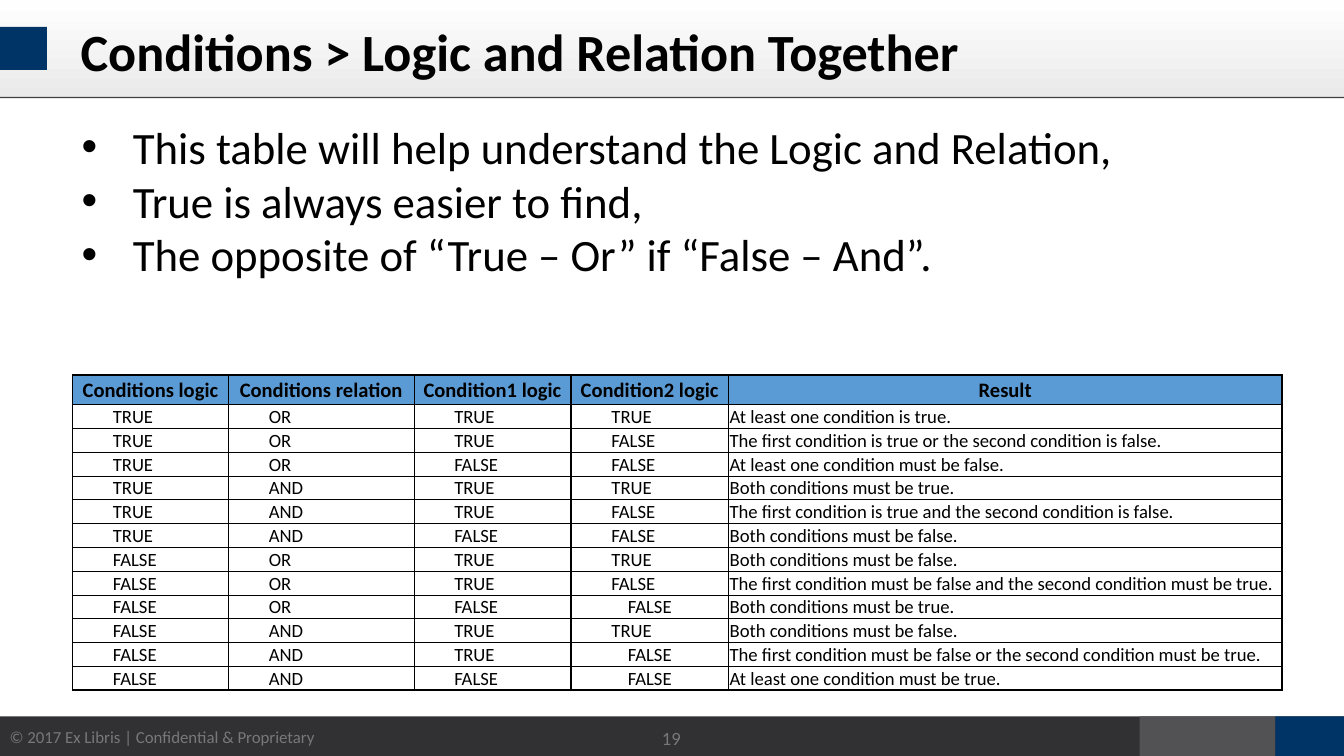
from lxml import etree
from pptx import Presentation
from pptx.dml.color import RGBColor
from pptx.enum import shapes, text
from pptx.oxml.ns import qn
from pptx.util import Inches, Pt

THEME = {
    "font": "Calibri",
    "black": "000000", "white": "FFFFFF", "navy": "003466", "muted": "787878",
    "footer": "313133", "footer_mid": "525254", "rule": "404040",
    "header_top": "FEFEFE", "header_bottom": "EAEAEA", "table_head": "5B9BD5",
    "title_size": 28, "body_size": 24, "head_size": 11, "cell_size": 10,
    "page_size": 10, "copyright_size": 9,
}

TITLE = "Conditions > Logic and Relation Together"
BULLETS = [
    "This table will help understand the Logic and Relation,",
    "True is always easier to find,",
    "The opposite of “True – Or” if “False – And”.",
]
COPYRIGHT = "© 2017 Ex Libris | Confidential & Proprietary"
PAGE = "19"

HEADERS = ["Conditions logic", "Conditions relation", "Condition1 logic",
           "Condition2 logic", "Result"]
ROWS = [
    ("TRUE", "OR", "TRUE", "TRUE", "At least one condition is true."),
    ("TRUE", "OR", "TRUE", "FALSE", "The first condition is true or the second condition is false."),
    ("TRUE", "OR", "FALSE", "FALSE", "At least one condition must be false."),
    ("TRUE", "AND", "TRUE", "TRUE", "Both conditions must be true."),
    ("TRUE", "AND", "TRUE", "FALSE", "The first condition is true and the second condition is false."),
    ("TRUE", "AND", "FALSE", "FALSE", "Both conditions must be false."),
    ("FALSE", "OR", "TRUE", "TRUE", "Both conditions must be false."),
    ("FALSE", "OR", "TRUE", "FALSE", "The first condition must be false and the second condition must be true."),
    ("FALSE", "OR", "FALSE", "FALSE", "Both conditions must be true."),
    ("FALSE", "AND", "TRUE", "TRUE", "Both conditions must be false."),
    ("FALSE", "AND", "TRUE", "FALSE", "The first condition must be false or the second condition must be true."),
    ("FALSE", "AND", "FALSE", "FALSE", "At least one condition must be true."),
]
COL_WIDTHS = [1.16, 1.38, 1.17, 1.17, 4.12]
TABLE_BOX = (0.54, 2.79, 9, 2.35)
HEAD_HEIGHT = 0.22
THICK_COLUMN_EDGES = {0, 1, 3, 5}
CENTERED_CELLS = {(9, 3), (11, 3), (12, 3)}

BARS = [
    ((0, 5.33, 10, 0.32), "footer"),
    ((8.48, 5.33, 1.01, 0.32), "footer_mid"),
    ((9.49, 5.33, 0.51, 0.32), "navy"),
    ((0, 0.01, 10, 0.72), ("header_top", "header_bottom")),
    ((0, 0.2, 0.35, 0.32), "navy"),
    ((0, 0.72, 10, 0.01), "rule"),
]


def color(name):
    return RGBColor.from_string(THEME[name])


def inches(box):
    return [Inches(v) for v in box]


def add_run(p, words, size, fill="black", bold=False):
    r = p.add_run()
    r.text = words
    r.font.name = THEME["font"]
    r.font.size = Pt(THEME[size])
    r.font.bold = bold
    r.font.color.rgb = color(fill)


def add_bar(slide, box, fill):
    """Draw a borderless rectangle; a pair of colours makes a vertical gradient."""
    sp = slide.shapes.add_shape(shapes.MSO_SHAPE.RECTANGLE, *inches(box))
    sp.shadow.inherit = False
    sp.line.fill.background()
    if isinstance(fill, tuple):
        sp.fill.gradient()
        sp.fill.gradient_angle = 270
        for stop, name in zip(sp.fill.gradient_stops, fill):
            stop.color.rgb = color(name)
    else:
        sp.fill.solid()
        sp.fill.fore_color.rgb = color(fill)


def add_label(slide, box, words, size, wrap, anchor):
    tf = slide.shapes.add_textbox(*inches(box)).text_frame
    tf.word_wrap = wrap
    tf.vertical_anchor = anchor
    p = tf.paragraphs[0]
    p.alignment = text.PP_ALIGN.CENTER
    add_run(p, words, size, "muted")


def add_title(slide):
    title = slide.shapes.title
    title.left, title.top, title.width, title.height = inches((0.5, 0.06, 9.07, 0.63))
    tf = title.text_frame
    tf.vertical_anchor = text.MSO_ANCHOR.MIDDLE
    p = tf.paragraphs[0]
    p.alignment = text.PP_ALIGN.LEFT
    add_run(p, TITLE, "title_size", bold=True)


def add_bullets(slide):
    tf = slide.shapes.add_textbox(*inches((0.51, 0.82, 9, 4.35))).text_frame
    tf.word_wrap = True
    tf.margin_top = Inches(0.07)
    for i, words in enumerate(BULLETS):
        p = tf.paragraphs[0] if i == 0 else tf.add_paragraph()
        pPr = p._p.get_or_add_pPr()
        pPr.set("marL", str(Inches(0.38)))
        pPr.set("indent", str(-Inches(0.38)))
        etree.SubElement(pPr, qn("a:buFont")).set("typeface", "Arial")
        etree.SubElement(pPr, qn("a:buChar")).set("char", "•")
        add_run(p, words, "body_size")


def set_borders(cell, widths):
    """Add left, right, top and bottom lines, which come before the cell fill."""
    tcPr = cell._tc.get_or_add_tcPr()
    for i, (tag, width) in enumerate(zip(("lnL", "lnR", "lnT", "lnB"), widths)):
        ln = etree.Element(qn(f"a:{tag}"), w=str(Pt(width)))
        fill = etree.SubElement(ln, qn("a:solidFill"))
        etree.SubElement(fill, qn("a:srgbClr")).set("val", THEME["black"])
        tcPr.insert(i, ln)


def add_logic_table(slide):
    grid = [HEADERS] + ROWS
    table = slide.shapes.add_table(len(grid), len(HEADERS), *inches(TABLE_BOX)).table
    for column, width in zip(table.columns, COL_WIDTHS):
        column.width = Inches(width)
    row_height = (TABLE_BOX[3] - HEAD_HEIGHT) / len(ROWS)
    thick_row_edges = {0, len(grid)}

    for i, row in enumerate(grid):
        head = i == 0
        table.rows[i].height = Inches(HEAD_HEIGHT if head else row_height)
        for j, words in enumerate(row):
            cell = table.cell(i, j)
            centered = head or (i, j) in CENTERED_CELLS
            indented = not centered and j < len(HEADERS) - 1
            cell.margin_left = Inches(0.3 if indented else 0.01)
            cell.margin_right = cell.margin_top = Inches(0.01)
            cell.margin_bottom = 0
            cell.vertical_anchor = text.MSO_ANCHOR.MIDDLE
            cell.fill.solid()
            cell.fill.fore_color.rgb = color("table_head" if head else "white")
            p = cell.text_frame.paragraphs[0]
            p.alignment = text.PP_ALIGN.CENTER if centered else text.PP_ALIGN.LEFT
            add_run(p, words, "head_size" if head else "cell_size", bold=head)
            thick = [j in THICK_COLUMN_EDGES, j + 1 in THICK_COLUMN_EDGES,
                     i in thick_row_edges, i + 1 in thick_row_edges]
            set_borders(cell, [1 if t else 0.5 for t in thick])


def main():
    prs = Presentation()
    prs.slide_width = Inches(10)
    prs.slide_height = prs.slide_width * 9 // 16
    slide = prs.slides.add_slide(prs.slide_layouts[5])
    for box, fill in BARS:
        add_bar(slide, box, fill)
    # The title placeholder goes in front of the header bars.
    slide.shapes._spTree.append(slide.shapes.title._element)
    add_title(slide)
    add_label(slide, (-0.04, 5.36, 2.49, 0.25), COPYRIGHT, "copyright_size",
              False, text.MSO_ANCHOR.TOP)
    add_label(slide, (4.7, 5.29, 0.59, 0.4), PAGE, "page_size",
              True, text.MSO_ANCHOR.MIDDLE)
    add_bullets(slide)
    add_logic_table(slide)
    prs.save("out.pptx")


if __name__ == "__main__":
    main()
